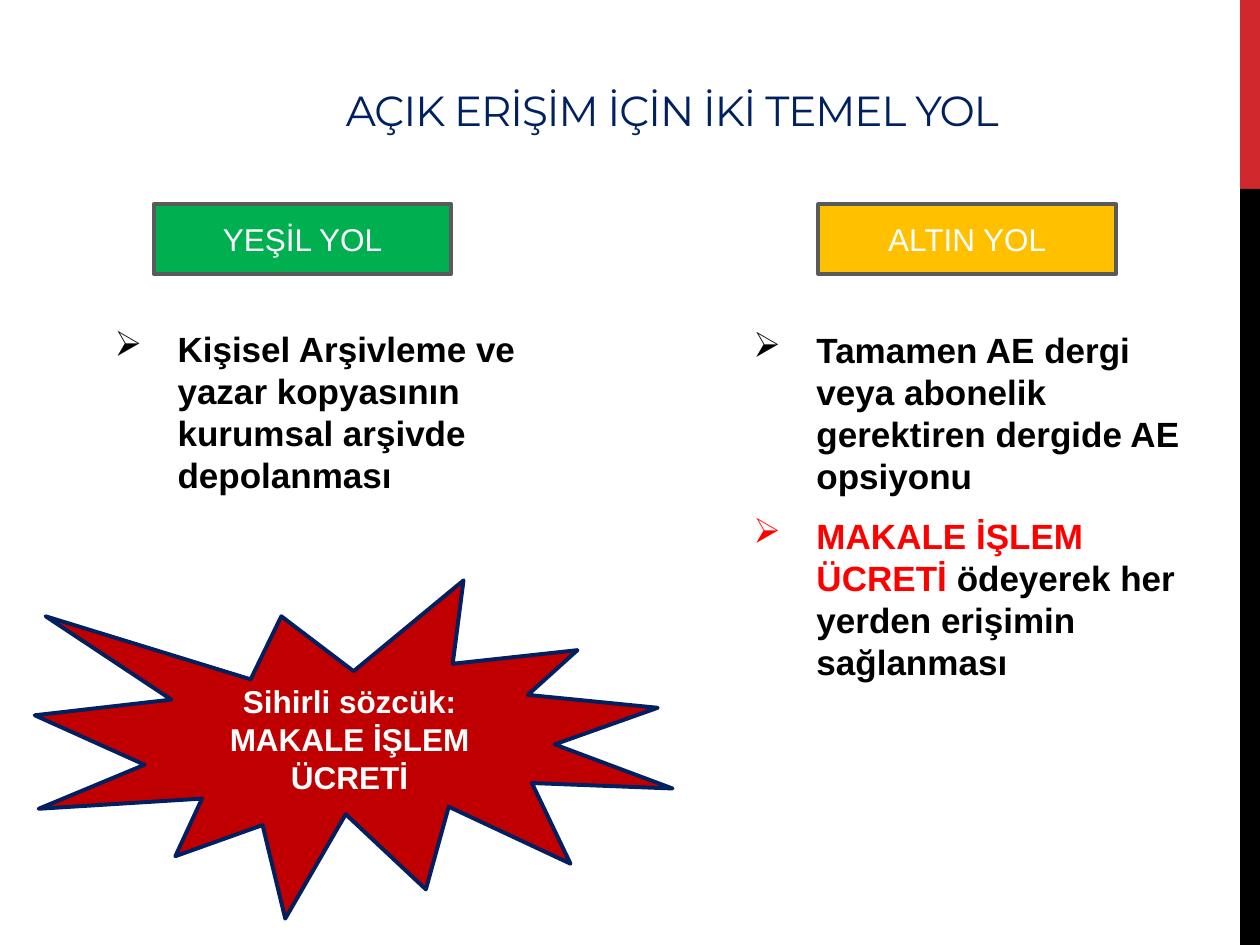
import dataclasses
import typing

import lxml.etree
import pptx
import pptx.dml.color
import pptx.enum.shapes
import pptx.enum.text
import pptx.oxml.ns
import pptx.shapes.autoshape
import pptx.slide
import pptx.text.text
import pptx.util

Cm = pptx.util.Cm
Pt = pptx.util.Pt
SHAPES = pptx.enum.shapes.MSO_SHAPE
ANCHORS = pptx.enum.text.MSO_ANCHOR
ALIGNMENTS = pptx.enum.text.PP_ALIGN


@dataclasses.dataclass(frozen=True)
class Theme:
    title_font: str = "Montserrat"
    body_font: str = "Arial"
    title_size: float = 24
    body_size: float = 20
    label_size: float = 18
    outline_width: float = 2.25
    navy: str = "002060"
    black: str = "000000"
    white: str = "FFFFFF"
    red: str = "FF0000"
    dark_red: str = "C00000"
    accent_red: str = "D1282E"
    green: str = "00B050"
    gold: str = "FFC000"
    grey: str = "5A5A5A"


THEME = Theme()


class Box(typing.NamedTuple):
    left: float
    top: float
    width: float
    height: float

    def lengths(self) -> list[pptx.util.Length]:
        return [Cm(value) for value in self]


class Piece(typing.NamedTuple):
    text: str
    color: str = THEME.black


@dataclasses.dataclass(frozen=True)
class Panel:
    box: Box
    fill: str
    line: str | None = None
    text: str = ""
    bold: bool = False
    kind: SHAPES = SHAPES.RECTANGLE


@dataclasses.dataclass(frozen=True)
class BulletList:
    box: Box
    items: list[list[Piece]]


def rgb(color: str) -> pptx.dml.color.RGBColor:
    return pptx.dml.color.RGBColor.from_string(color)


def set_font(font: pptx.text.text.Font, name: str, size: float, color: str, bold: bool = False) -> None:
    font.name = name
    font.size = Pt(size)
    font.bold = bold
    font.color.rgb = rgb(color)


def add_text_frame(slide: pptx.slide.Slide, box: Box) -> pptx.text.text.TextFrame:
    text_frame = slide.shapes.add_textbox(*box.lengths()).text_frame
    text_frame.word_wrap = True
    return text_frame


def add_title(slide: pptx.slide.Slide, box: Box, text: str) -> None:
    text_frame = add_text_frame(slide, box)
    text_frame.vertical_anchor = ANCHORS.BOTTOM
    paragraph = text_frame.paragraphs[0]
    paragraph.alignment = ALIGNMENTS.CENTER
    run = paragraph.add_run()
    run.text = text
    set_font(paragraph.font, THEME.title_font, THEME.title_size, THEME.navy)
    run.font._element.set("spc", "-60")


def add_panel(slide: pptx.slide.Slide, panel: Panel) -> None:
    shape = slide.shapes.add_shape(panel.kind, *panel.box.lengths())
    shape.shadow.inherit = False
    shape.fill.solid()
    shape.fill.fore_color.rgb = rgb(panel.fill)
    if panel.line:
        shape.line.color.rgb = rgb(panel.line)
        shape.line.width = Pt(THEME.outline_width)
    else:
        shape.line.fill.background()
    if panel.text:
        shape.text_frame.word_wrap = True
        shape.text_frame.vertical_anchor = ANCHORS.MIDDLE
        paragraph = shape.text_frame.paragraphs[0]
        paragraph.text = panel.text
        paragraph.alignment = ALIGNMENTS.CENTER
        set_font(paragraph.font, THEME.body_font, THEME.label_size, THEME.white, panel.bold)


def set_bullet(paragraph: pptx.text.text._Paragraph, character: str, indent: pptx.util.Length) -> None:
    properties = paragraph._p.get_or_add_pPr()
    properties.set("marL", str(indent))
    properties.set("indent", str(-indent))
    bullet = lxml.etree.SubElement(properties, pptx.oxml.ns.qn("a:buChar"))
    bullet.set("char", character)


def add_bullet_list(slide: pptx.slide.Slide, bullet_list: BulletList) -> None:
    text_frame = add_text_frame(slide, bullet_list.box)
    for index, pieces in enumerate(bullet_list.items):
        paragraph = text_frame.add_paragraph() if index else text_frame.paragraphs[0]
        set_bullet(paragraph, "➢", Cm(1.27))
        paragraph.space_before = Pt(4)
        paragraph.space_after = Pt(6)
        set_font(paragraph.font, THEME.body_font, THEME.body_size, THEME.black, True)
        for piece in pieces:
            run = paragraph.add_run()
            run.text = piece.text
            run.font.color.rgb = rgb(piece.color)


SIDE_BANDS = [
    Panel(Box(25, 0, 0.4, 3.81), THEME.accent_red),
    Panel(Box(25, 3.81, 0.4, 15.24), THEME.black),
]
ROAD_LABELS = [
    Panel(Box(left, 4.12, 6, 1.4), fill, THEME.grey, text)
    for left, fill, text in [
        (3.1, THEME.green, "YEŞİL YOL"),
        (16.5, THEME.gold, "ALTIN YOL"),
    ]
]
MAGIC_WORD = Panel(
    Box(0.7, 11.7, 12.86, 6.82),
    THEME.dark_red,
    THEME.navy,
    "Sihirli sözcük: MAKALE İŞLEM ÜCRETİ",
    True,
    SHAPES.EXPLOSION1,
)
ROAD_DETAILS = [
    BulletList(
        Box(2.06, 6.48, 9.14, 12.57),
        [[Piece("Kişisel Arşivleme ve yazar kopyasının kurumsal arşivde depolanması")]],
    ),
    BulletList(
        Box(14.94, 6.5, 9.14, 12.55),
        [
            [Piece("Tamamen AE dergi veya abonelik gerektiren dergide AE opsiyonu")],
            [
                Piece("MAKALE İŞLEM ÜCRETİ ", THEME.red),
                Piece("ödeyerek her yerden erişimin sağlanması"),
            ],
        ],
    ),
]


def main() -> None:
    presentation = pptx.Presentation()
    presentation.slide_width = Cm(25.4)
    presentation.slide_height = Cm(19.05)
    slide = presentation.slides.add_slide(presentation.slide_layouts[6])
    for band in SIDE_BANDS:
        add_panel(slide, band)
    add_title(slide, Box(5.5, 0.33, 16.1, 2.51), "AÇIK ERİŞİM İÇİN İKİ TEMEL YOL")
    for bullet_list in ROAD_DETAILS:
        add_bullet_list(slide, bullet_list)
    for panel in [*ROAD_LABELS, MAGIC_WORD]:
        add_panel(slide, panel)
    presentation.save("out.pptx")


if __name__ == "__main__":
    main()
